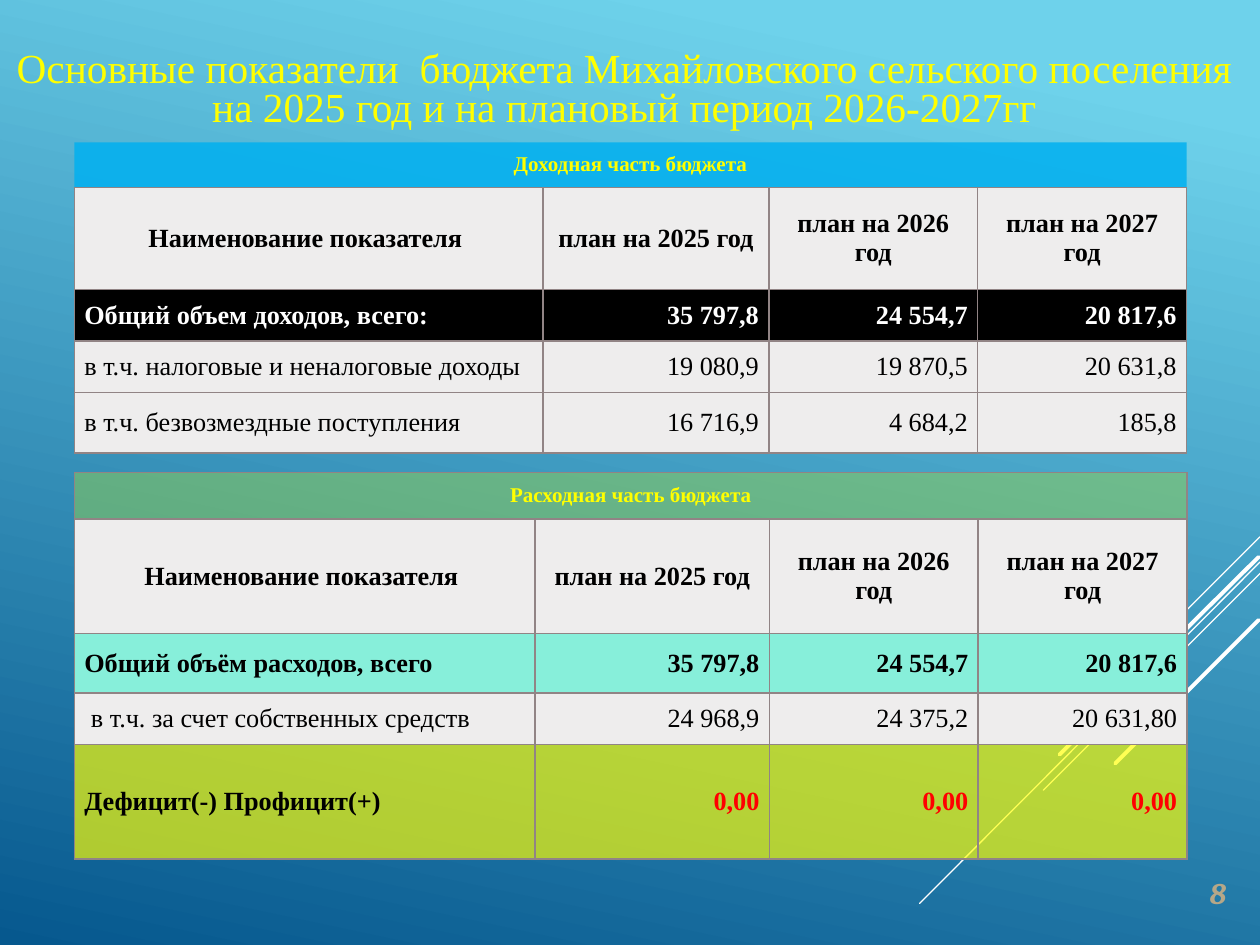
from lxml.etree import SubElement
from pptx import Presentation
from pptx.dml.color import RGBColor
from pptx.enum.shapes import MSO_CONNECTOR
from pptx.enum.text import MSO_ANCHOR, PP_ALIGN
from pptx.oxml.ns import qn
from pptx.util import Cm, Pt

SERIF = "Times New Roman"
GREY, BLACK, WHITE, YELLOW, RED = "EEEDED", "000000", "FFFFFF", "FFFF00", "FF0000"
BORDER = "918485"
ALL_SIDES = "LRTB"
COLUMN_HEADS = ["Наименование показателя ", "план на 2025 год",
                "план на 2026 год", "план на 2027 год"]


def color(value):
    return RGBColor.from_string(value)


def add_span(para, text, size, shade, font=SERIF, bold=False, italic=False):
    span = para.add_run()
    span.text = text
    span.font.name = font
    span.font.size = Pt(size)
    span.font.bold = bold
    span.font.italic = italic
    span.font.color.rgb = color(shade)


def paint_background(page):
    fill = page.background.fill
    fill.gradient()
    fill.gradient_angle = 258
    for stop, position, shade in zip(fill.gradient_stops, (0.1, 1), ("6ED2EB", "06588E")):
        stop.position = position
        stop.color.rgb = color(shade)


def add_rays(page, rays):
    for x1, y1, x2, y2, width in rays:
        ray = page.shapes.add_connector(MSO_CONNECTOR.STRAIGHT, Cm(x1), Cm(y1), Cm(x2), Cm(y2))
        ray.line.color.rgb = color(WHITE)
        ray.line.width = Pt(width)
        ray.line._get_or_add_ln().set("cap", "rnd")
        SubElement(ray._element.spPr, qn("a:effectLst"))


def add_text_frame(page, left, top, width, height, anchor):
    box = page.shapes.add_textbox(Cm(left), Cm(top), Cm(width), Cm(height))
    box.text_frame.word_wrap = True
    box.text_frame.vertical_anchor = anchor
    return box.text_frame


def add_title(page, left, top, width, height, lines):
    frame = add_text_frame(page, left, top, width, height, MSO_ANCHOR.MIDDLE)
    for index, line in enumerate(lines):
        para = frame.add_paragraph() if index else frame.paragraphs[0]
        para.alignment = PP_ALIGN.CENTER
        para.line_spacing = 0.8
        properties = para._p.get_or_add_pPr()
        properties.set("marL", str(Cm(1.22)))
        properties.set("indent", str(-Cm(1.22)))
        add_span(para, line, 23.6, YELLOW)


def add_page_number(page, left, top, width, height, number):
    para = add_text_frame(page, left, top, width, height, MSO_ANCHOR.BOTTOM).paragraphs[0]
    para.alignment = PP_ALIGN.RIGHT
    para.line_spacing = 0.9
    add_span(para, number, 17, "B5A788", "Cambria", bold=True, italic=True)


def style_cell(cell, fill, opacity=100, sides=ALL_SIDES):
    """Set margins, borders and a fill whose opacity is in percent."""
    cell.vertical_anchor = MSO_ANCHOR.MIDDLE
    cell.margin_left = cell.margin_right = cell.margin_top = cell.margin_bottom = Cm(0.2)
    properties = cell._tc.get_or_add_tcPr()
    for side in ALL_SIDES:
        line = SubElement(properties, qn(f"a:ln{side}"), w=str(Pt(1)))
        if side in sides:
            solid = SubElement(line, qn("a:solidFill"))
            SubElement(solid, qn("a:srgbClr"), val=BORDER)
        else:
            SubElement(line, qn("a:noFill"))
    cell.fill.solid()
    cell.fill.fore_color.rgb = color(fill)
    if opacity < 100:
        shade = properties.find(qn("a:solidFill")).find(qn("a:srgbClr"))
        SubElement(shade, qn("a:alpha"), val=str(opacity * 1000))


def write_cell(cell, text, align, size, shade, bold):
    para = cell.text_frame.paragraphs[0]
    para.alignment = align
    add_span(para, text, size, shade, bold=bold)


def add_budget_table(page, left, top, widths, heights, banner, rows):
    """Place a banner row, the column heads and the rows of figures.

    banner: text, fill, opacity, bordered sides
    rows: texts, fill, opacity, label colour, figure colour, bold
    """
    frame = page.shapes.add_table(len(heights), len(widths), Cm(left), Cm(top),
                                  Cm(sum(widths)), Cm(sum(heights)))
    table = frame.table
    table.first_row = table.horz_banding = False
    for column, width in zip(table.columns, widths):
        column.width = Cm(width)
    for row, height in zip(table.rows, heights):
        row.height = Cm(height)

    title, fill, opacity, sides = banner
    table.cell(0, 0).merge(table.cell(0, len(widths) - 1))
    for cell in table.rows[0].cells:
        style_cell(cell, fill, opacity, sides)
    write_cell(table.cell(0, 0), title, PP_ALIGN.CENTER, 12, YELLOW, True)

    for cell, head in zip(table.rows[1].cells, COLUMN_HEADS):
        style_cell(cell, GREY)
        write_cell(cell, head, PP_ALIGN.CENTER, 15, BLACK, True)

    for index, (texts, fill, opacity, label_shade, figure_shade, bold) in enumerate(rows, 2):
        for column, text in enumerate(texts):
            cell = table.cell(index, column)
            style_cell(cell, fill, opacity)
            align = PP_ALIGN.RIGHT if column else PP_ALIGN.LEFT
            write_cell(cell, text, align, 15, figure_shade if column else label_shade, bold)


def main():
    deck = Presentation()
    deck.slide_width, deck.slide_height = Cm(25.4), Cm(19.05)
    page = deck.slides.add_slide(deck.slide_layouts[6])
    paint_background(page)
    add_rays(page, [
        (25.4, 10.82, 23.29, 12.93, 0.75),
        (25.4, 11.33, 18.54, 18.21, 0.75),
        (25.4, 11.56, 21.03, 15.93, 0.75),
        (25.37, 11.23, 21.36, 15.21, 2.25),
        (25.37, 12.5, 22.48, 15.39, 2.25),
    ])
    add_page_number(page, 23.7, 17.5, 1.27, 0.99, "8")
    add_title(page, 0, 0.76, 25.4, 2.16, [
        "Основные показатели  бюджета Михайловского сельского поселения ",
        "на 2025 год и на плановый период 2026-2027гг ",
    ])
    add_budget_table(
        page, 1.5, 2.87, [9.45, 4.55, 4.21, 4.21], [0.89, 2.06, 1.02, 1.02, 1.22],
        ("Доходная часть бюджета", "00B0F0", 84, "B"),
        [
            (["Общий объем доходов, всего:", "35 797,8", "24 554,7", "20 817,6"],
             BLACK, 100, WHITE, WHITE, True),
            (["в т.ч. налоговые и неналоговые доходы", "19 080,9", "19 870,5", "20 631,8"],
             GREY, 100, BLACK, BLACK, False),
            (["в т.ч. безвозмездные поступления", "16 716,9", "4 684,2", "185,8"],
             GREY, 100, BLACK, BLACK, False),
        ])
    add_budget_table(
        page, 1.5, 9.53, [9.29, 4.72, 4.21, 4.21], [0.93, 2.31, 1.2, 1.03, 2.31],
        ("Расходная часть бюджета", "92D050", 50, ALL_SIDES),
        [
            (["Общий объём расходов, всего", "35 797,8", "24 554,7", "20 817,6"],
             "87EFDA", 100, BLACK, BLACK, True),
            ([" в т.ч. за счет собственных средств", "24 968,9", "24 375,2", "20 631,80"],
             GREY, 100, BLACK, BLACK, False),
            (["Дефицит(-) Профицит(+)", "0,00", "0,00", "0,00"],
             YELLOW, 67, BLACK, RED, True),
        ])
    deck.save("out.pptx")


if __name__ == "__main__":
    main()
